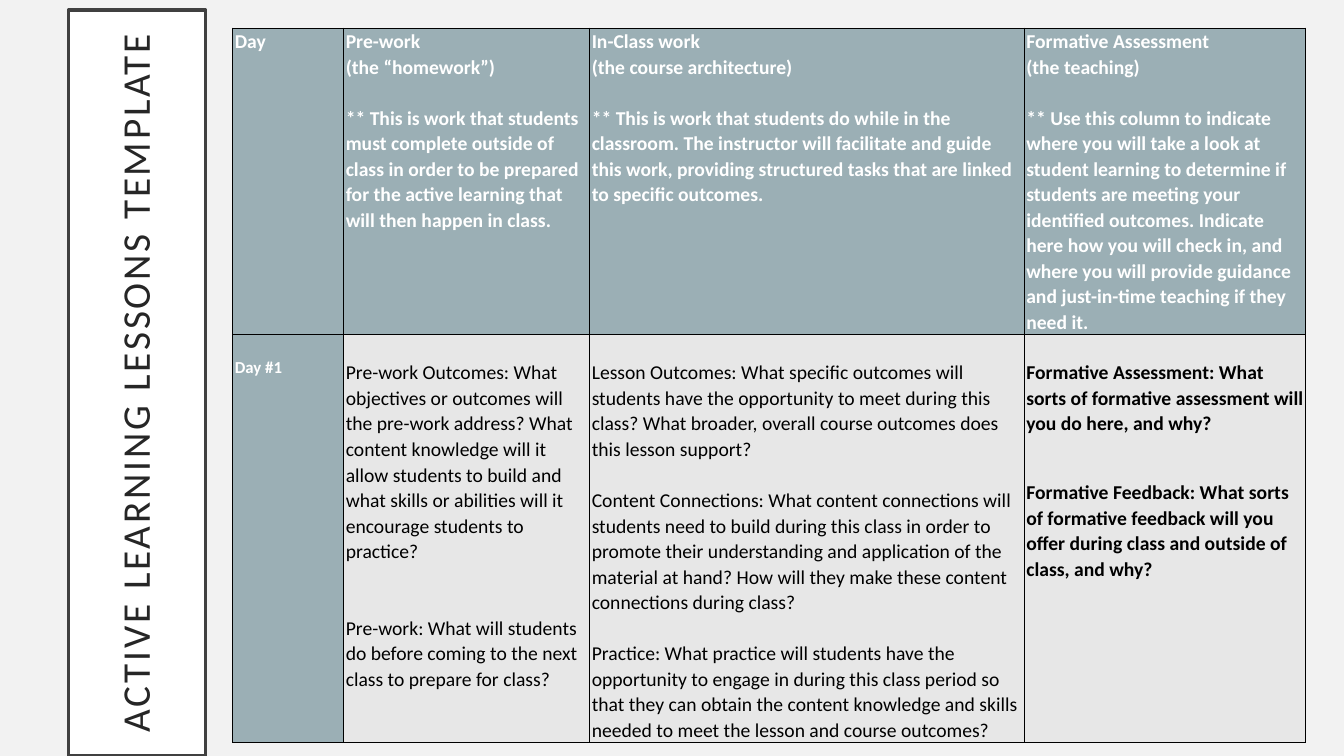
from dataclasses import dataclass

from lxml import etree
from pptx import Presentation
from pptx.dml.color import RGBColor
from pptx.enum.shapes import MSO_SHAPE
from pptx.enum.text import MSO_ANCHOR, PP_ALIGN
from pptx.oxml.ns import qn
from pptx.util import Inches, Pt

RECT = MSO_SHAPE.RECTANGLE
MIDDLE = MSO_ANCHOR.MIDDLE
CENTER = PP_ALIGN.CENTER

WHITE = RGBColor(0xFF, 0xFF, 0xFF)
BLACK = RGBColor(0x00, 0x00, 0x00)
PAPER = RGBColor(0xF2, 0xF2, 0xF2)
FRAME = RGBColor(0x40, 0x40, 0x40)
INK = RGBColor(0x26, 0x26, 0x26)
TEAL = RGBColor(0x9B, 0xAF, 0xB5)
GREY = RGBColor(0xE7, 0xE7, 0xE7)

FONT = "Calibri"
LINE = 18.2  # height in points of one line of table text
COLS = (1.1, 2.44, 4.31, 2.79)
ROWS = (2.93, 4.05)


@dataclass
class Entry:
    """Text of one cell; gap is the space in points before paragraph number `at`
    and every second one after it."""
    paras: tuple[str, ...]
    fill: RGBColor = GREY
    color: RGBColor = BLACK
    size: int = 14
    bold: bool = False
    top: float = 0.25
    gap: float = LINE
    at: int = 1


def head(*paras: str) -> Entry:
    return Entry(paras, TEAL, WHITE, bold=True, top=0, at=2)


GRID = (
    (
        head("Day"),
        head("Pre-work", "(the “homework”)",
             "** This is work that students must complete outside of class in order "
             "to be prepared for the active learning that will then happen in class."),
        head("In-Class work", "(the course architecture)",
             "** This is work that students do while in the classroom. The instructor "
             "will facilitate and guide this work, providing structured tasks that are "
             "linked to specific outcomes."),
        head("Formative Assessment", "(the teaching)",
             "** Use this column to indicate where you will take a look at student "
             "learning to determine if students are meeting your identified outcomes. "
             "Indicate here how you will check in, and where you will provide guidance "
             "and just-in-time teaching if they need it."),
    ),
    (
        Entry(("Day #1",), TEAL, WHITE, size=12, bold=True, top=0.22),
        Entry((
            "Pre-work Outcomes: What objectives or outcomes will the pre-work address? "
            "What content knowledge will it allow students to build and what skills or "
            "abilities will it encourage students to practice?",
            "Pre-work: What will students do before coming to the next class to prepare "
            "for class?",
        ), gap=2 * LINE),
        Entry((
            "Lesson Outcomes: What specific outcomes will students have the opportunity "
            "to meet during this class? What broader, overall course outcomes does this "
            "lesson support?",
            "Content Connections: What content connections will students need to build "
            "during this class in order to promote their understanding and application "
            "of the material at hand? How will they make these content connections "
            "during class?",
            "Practice: What practice will students have the opportunity to engage in "
            "during this class period so that they can obtain the content knowledge and "
            "skills needed to meet the lesson and course outcomes?",
        )),
        Entry((
            "Formative Assessment: What sorts of formative assessment will you do here, "
            "and why?",
            "Formative Feedback: What sorts of formative feedback will you offer during "
            "class and outside of class, and why?",
        ), bold=True, gap=31),
    ),
)


def style(font, color: RGBColor, **form) -> None:
    font.color.rgb = color
    for key, val in form.items():
        setattr(font, key, val)


def border(cell) -> None:
    props = cell._tc.get_or_add_tcPr()
    for spot, side in enumerate(("lnL", "lnR", "lnT", "lnB")):
        edge = etree.Element(qn(f"a:{side}"), w=str(Pt(1)))
        fill = etree.SubElement(edge, qn("a:solidFill"))
        etree.SubElement(fill, qn("a:srgbClr"), val=str(BLACK))
        props.insert(spot, edge)


def write(cell, entry: Entry) -> None:
    cell.fill.solid()
    cell.fill.fore_color.rgb = entry.fill
    sides = {"left": 0.02, "right": 0.02, "top": entry.top, "bottom": 0}
    for side, size in sides.items():
        setattr(cell, f"margin_{side}", Inches(size))
    frame = cell.text_frame
    frame.text = "\n".join(entry.paras)
    for num, para in enumerate(frame.paragraphs):
        para.line_spacing = 1.07
        if num >= entry.at:
            para.space_before = Pt(entry.gap)
        style(para.runs[0].font, entry.color, name=FONT,
              size=Pt(entry.size), bold=entry.bold)
    border(cell)


def add_title(slide) -> None:
    box = slide.shapes.add_shape(
        RECT, Inches(-2.34), Inches(3.12), Inches(7.4), Inches(1.36))
    box.rotation = 270
    box.shadow.inherit = False
    box.fill.solid()
    box.fill.fore_color.rgb = WHITE
    box.line.color.rgb = FRAME
    box.line.width = Pt(2.5)
    frame = box.text_frame
    frame.word_wrap = True
    frame.vertical_anchor = MIDDLE
    for side in ("left", "right", "top", "bottom"):
        setattr(frame, f"margin_{side}", Inches(0.2))
    para = frame.paragraphs[0]
    para.alignment = CENTER
    para.line_spacing = 0.9
    run = para.add_run()
    run.text = "ACTIVE LEARNING LESSONS TEMPLATE"
    style(run.font, INK, name=FONT, size=Pt(28))
    run._r.get_or_add_rPr().set("spc", "200")


def add_plan(slide) -> None:
    """Draw the lesson table."""
    table = slide.shapes.add_table(
        len(ROWS), len(COLS), Inches(2.31), Inches(0.28),
        Inches(sum(COLS)), Inches(sum(ROWS))).table
    table.horz_banding = False
    for col, width in zip(table.columns, COLS):
        col.width = Inches(width)
    for row, height, line in zip(table.rows, ROWS, GRID):
        row.height = Inches(height)
        for cell, entry in zip(row.cells, line):
            write(cell, entry)


def main() -> None:
    deck = Presentation()
    deck.slide_width = Inches(13.33)
    deck.slide_height = Inches(7.5)
    slide = deck.slides.add_slide(deck.slide_layouts[6])
    slide.background.fill.solid()
    slide.background.fill.fore_color.rgb = PAPER
    add_title(slide)
    add_plan(slide)
    deck.save("out.pptx")


if __name__ == "__main__":
    main()
